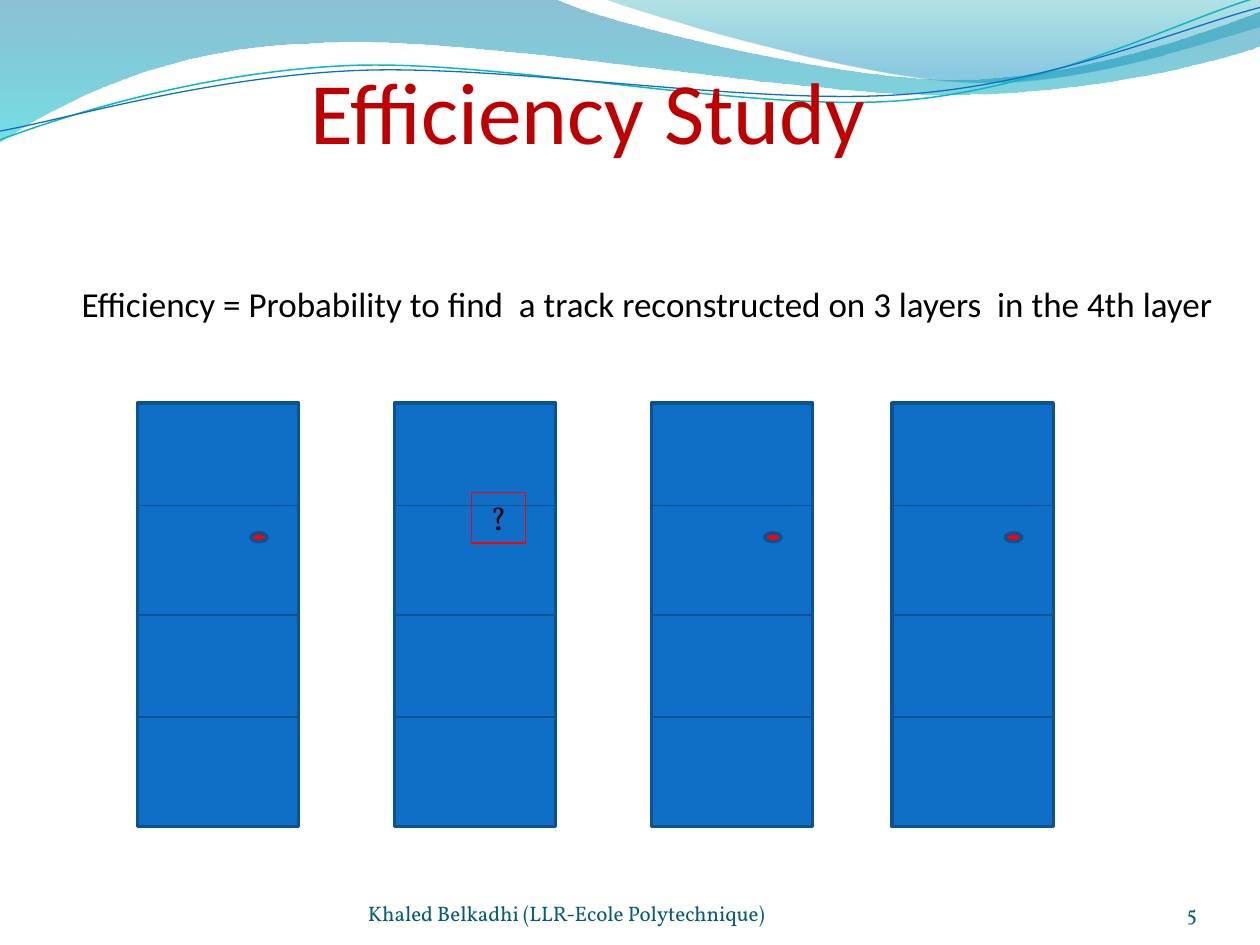
from math import cos, radians, sin

from lxml import etree
from pptx import Presentation
from pptx.dml.color import RGBColor
from pptx.enum import shapes, text
from pptx.oxml.ns import qn
from pptx.util import Inches, Pt

TITLE_RED = RGBColor(0xC0, 0x00, 0x00)
HIT_RED = RGBColor(0xFF, 0x00, 0x00)
BLACK = RGBColor(0x00, 0x00, 0x00)
FOOTER_TEAL = RGBColor(0x04, 0x5D, 0x75)
LAYER_BLUE = RGBColor(0x0F, 0x6F, 0xC6)
EDGE_BLUE = RGBColor(0x0B, 0x52, 0x92)
DIVIDER_BLUE = RGBColor(0x09, 0x52, 0x95)
WAVE_TEAL = RGBColor(0x0A, 0xB8, 0xBF)
BAND_BLUE, BAND_CYAN = RGBColor(0x00, 0x74, 0xA1), RGBColor(0x00, 0xC6, 0xCF)
CREST_TEAL, CREST_BLUE = RGBColor(0x00, 0xA1, 0xA9), RGBColor(0x00, 0x8B, 0xBF)

WAVE_TILT = -2.7

# Outlines: a pair is a straight step, six numbers are a Bezier curve
BAND = [(0, 0), (4.4, -0.01), (4.76, 0.17, 6.64, 0.63, 7.58, 0.63),
        (8.53, 0.63, 9.58, 0.26, 10, 0.09), (10.01, 0.36),
        (9.83, 0.44, 8.7, 0.76, 7.46, 0.75), (6.22, 0.75, 3.82, 0.28, 2.57, 0.34),
        (1.29, 0.36, 0.46, 0.83, -0.01, 1.13)]
CREST = [(4.79, -0.01), (5.09, 0.11, 6.82, 0.62, 7.69, 0.65),
         (8.56, 0.69, 9.61, 0.32, 10, 0.21), (10, 0)]
TEAL_WAVE = [(0, 1.11), (0.48, 0.93, 1.58, 0.57, 2.77, 0.52),
             (3.95, 0.47, 5.93, 0.89, 7.13, 0.8), (8.33, 0.71, 9.38, 0.15, 9.98, -0.02)]
BLUE_WAVE = [(0, 1.04), (0.47, 0.96, 1.64, 0.61, 2.83, 0.56),
             (4.03, 0.51, 5.97, 0.84, 7.17, 0.75), (8.36, 0.67, 9.41, 0.21, 10, 0.06)]


def inches(box):
    return [Inches(value) for value in box]


def level(outline, centre):
    """Turn an outline back by the wave tilt around a centre."""
    c, s = cos(radians(-WAVE_TILT)), sin(radians(-WAVE_TILT))
    levelled = []
    for step in outline:
        offsets = [(x - centre[0], y - centre[1]) for x, y in zip(step[::2], step[1::2])]
        levelled.append(tuple(value for x, y in offsets
                              for value in (centre[0] + x * c - y * s,
                                            centre[1] + x * s + y * c)))
    return levelled


def add_outline(page, outline, close):
    points = [tuple(inches(pair)) for step in outline for pair in zip(step[::2], step[1::2])]
    builder = page.shapes.build_freeform(*points[0])
    builder.add_line_segments(points[1:], close=close)
    shape = builder.convert_to_shape()
    shape.shadow.inherit = False
    # Join each three points of a curved step into one Bezier segment
    segments = iter(list(shape._element.iter(qn("a:lnTo"))))
    for step in outline[1:]:
        first = next(segments)
        if len(step) == 6:
            first.tag = qn("a:cubicBezTo")
            for extra in (next(segments), next(segments)):
                first.append(extra[0])
                extra.getparent().remove(extra)
    return shape


def add_gradient_area(page, outline, stops):
    """Fill a closed outline downwards; a stop is (percent, colour, opacity)."""
    area = add_outline(page, outline, True)
    area.line.fill.background()
    gradient = etree.Element(qn("a:gradFill"), rotWithShape="1")
    stop_list = etree.SubElement(gradient, qn("a:gsLst"))
    for position, colour, opacity in stops:
        stop = etree.SubElement(stop_list, qn("a:gs"), pos=str(position * 1000))
        paint = etree.SubElement(stop, qn("a:srgbClr"), val=str(colour))
        etree.SubElement(paint, qn("a:alpha"), val=str(opacity * 1000))
    etree.SubElement(gradient, qn("a:lin"), ang="5400000", scaled="0")
    area._element.spPr.find(qn("a:custGeom")).addnext(gradient)


def add_wave_header(page):
    add_gradient_area(page, BAND, [(0, BAND_BLUE, 45), (100, BAND_CYAN, 55)])
    add_gradient_area(page, CREST, [(0, CREST_TEAL, 30), (80, CREST_BLUE, 45)])
    for outline, centre, colour, width in ((TEAL_WAVE, (4.99, 0.58), WAVE_TEAL, 0.85),
                                           (BLUE_WAVE, (5, 0.59), LAYER_BLUE, 0.75)):
        wave = add_outline(page, level(outline, centre), False)
        wave.rotation = WAVE_TILT
        wave.fill.background()
        set_line(wave, colour, width)


def set_line(shape, colour, width):
    shape.line.color.rgb = colour
    shape.line.width = Pt(width)


def write(shape, words, size, font, colour, align=text.PP_ALIGN.LEFT, **frame_format):
    frame = shape.text_frame
    for name, value in {"word_wrap": True, **frame_format}.items():
        setattr(frame, name, value)
    para = frame.paragraphs[0]
    para.alignment = align
    span = para.add_run()
    span.text = words
    for name, value in {"size": Pt(size), "name": font, "bold": False}.items():
        setattr(span.font, name, value)
    span.font.color.rgb = colour


def add_title(page, box):
    title = page.shapes.title
    title.left, title.top, title.width, title.height = inches(box)
    write(title, "Efficiency Study", 50, "Calibri", TITLE_RED, text.PP_ALIGN.CENTER,
          vertical_anchor=text.MSO_ANCHOR.TOP, auto_size=text.MSO_AUTO_SIZE.NONE)
    # Bring the title in front of the waves
    page.shapes._spTree.append(title._element)


def add_definition(page, box):
    write(page.shapes.add_textbox(*inches(box)),
          "Efficiency = Probability to find  a track reconstructed on 3 layers  in the 4th layer",
          20, "Calibri", BLACK, word_wrap=False, auto_size=text.MSO_AUTO_SIZE.SHAPE_TO_FIT_TEXT)


def add_footer(page, box, words, align):
    margins = dict.fromkeys(("margin_left", "margin_top", "margin_right", "margin_bottom"), 0)
    write(page.shapes.add_textbox(*inches(box)), words, 12, "Vollkorn", FOOTER_TEAL, align,
          vertical_anchor=text.MSO_ANCHOR.BOTTOM, **margins)


def add_solid(page, kind, box, fill):
    shape = page.shapes.add_shape(kind, *inches(box))
    shape.shadow.inherit = False
    shape.fill.solid()
    shape.fill.fore_color.rgb = fill
    set_line(shape, EDGE_BLUE, 2)
    return shape


def add_layer(page, box):
    """Draw one detector layer cut into four cells."""
    left, top, width, height = box
    layer = add_solid(page, shapes.MSO_SHAPE.RECTANGLE, box, LAYER_BLUE)
    for offset in (height / 2, 0.81, 2.49):
        y = top + offset
        divider = page.shapes.add_connector(shapes.MSO_CONNECTOR.STRAIGHT,
                                            *inches((left, y, left + width, y)))
        set_line(divider, DIVIDER_BLUE, 0.75)
        etree.SubElement(divider._element.spPr, qn("a:effectLst"))
        if offset == height / 2:
            divider.begin_connect(layer, 1)
            divider.end_connect(layer, 3)


def add_hit(page, box):
    add_solid(page, shapes.MSO_SHAPE.OVAL, box, HIT_RED)


def add_missing_hit(page, box):
    frame = page.shapes.add_shape(shapes.MSO_SHAPE.RECTANGLE, *inches(box))
    frame.shadow.inherit = False
    frame.fill.background()
    set_line(frame, HIT_RED, 0.75)
    write(frame, "?", 18, "Vollkorn", BLACK, text.PP_ALIGN.CENTER,
          vertical_anchor=text.MSO_ANCHOR.TOP, auto_size=text.MSO_AUTO_SIZE.SHAPE_TO_FIT_TEXT)


def add_detector(page, lefts, top, missing):
    for left in lefts:
        add_layer(page, (left, top, 1.28, 3.36))
    for index, left in enumerate(lefts):
        if index != missing:
            add_hit(page, (left + 0.9, top + 1.03, 0.13, 0.07))
    add_missing_hit(page, (lefts[missing] + 0.61, top + 0.71, 0.43, 0.4))


def main():
    deck = Presentation()
    deck.slide_width, deck.slide_height = Inches(10), Inches(7.5)
    page = deck.slides.add_slide(deck.slide_layouts.get_by_name("Title Only"))
    add_wave_header(page)
    add_footer(page, (2.92, 6.95, 3.67, 0.4), "Khaled Belkadhi (LLR-Ecole Polytechnique)",
               text.PP_ALIGN.LEFT)
    add_footer(page, (8.67, 6.95, 0.83, 0.4), "5", text.PP_ALIGN.RIGHT)
    add_title(page, (0.17, 0.4, 9, 1.25))
    add_definition(page, (0.55, 2.19, 9.34, 0.44))
    add_detector(page, (1.09, 3.13, 5.17, 7.08), 3.2, missing=1)
    deck.save("out.pptx")


if __name__ == "__main__":
    main()
